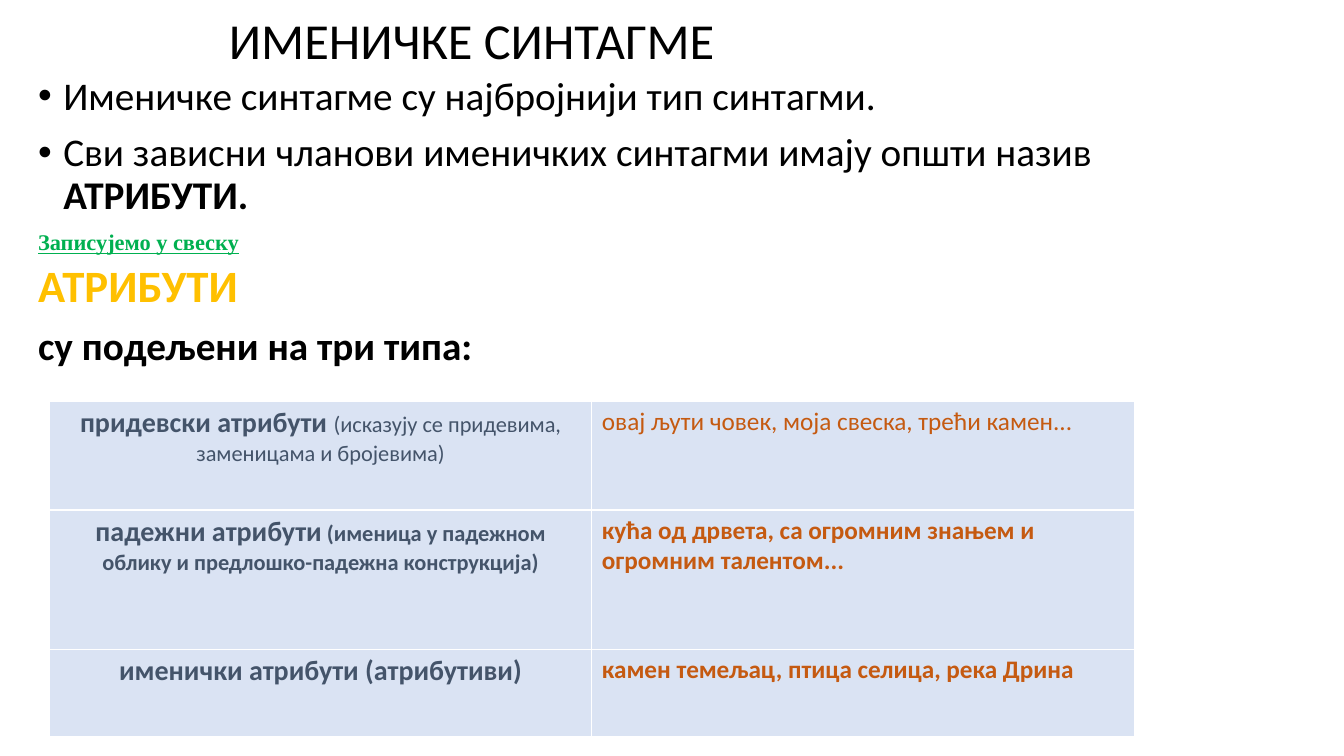
from lxml import etree
from pptx import Presentation
from pptx import util as u
from pptx.dml import color
from pptx.enum import text
from pptx.oxml import ns

BLACK, GREEN, GOLD = "000000", "00B050", "FFC000"
SLATE, RUST, PALE_BLUE, WHITE = "44546A", "C55A11", "DAE3F3", "FFFFFF"

ATTRIBUTE_ROWS = [
    (1.08, "придевски атрибути ", "(исказују се придевима, заменицама и бројевима)",
     "овај љути човек, моја свеска, трећи камен...", False),
    (1.38, "падежни атрибути", " (именица у падежном облику и предлошко-падежна конструкција)",
     "кућа од дрвета, са огромним знањем и огромним талентом...", True),
    (0.87, "именички атрибути (атрибутиви)", "",
     "камен темељац, птица селица, река Дрина", True),
]


def rgb(hex_string):
    return color.RGBColor.from_string(hex_string)


def add_span(para, words, size=28, hue=BLACK, bold=False, underline=False, font="Calibri"):
    span = para.add_run()
    span.text = words
    span.font.name = font
    span.font.size = u.Pt(size)
    span.font.bold = bold
    span.font.underline = underline
    span.font.color.rgb = rgb(hue)


def add_bullet(para):
    properties = para._p.get_or_add_pPr()
    properties.set("marL", str(u.Inches(0.25)))
    properties.set("indent", str(-u.Inches(0.25)))
    font = etree.SubElement(properties, ns.qn("a:buFont"))
    font.set("typeface", "Arial")
    etree.SubElement(properties, ns.qn("a:buChar")).set("char", "•")


def add_box(page, left, top, width, height):
    frame = page.shapes.add_textbox(*map(u.Inches, (left, top, width, height))).text_frame
    frame.word_wrap = True
    return frame


def add_title(page, words):
    title = page.shapes.title
    title.left, title.top = u.Inches(2.17), u.Inches(0.09)
    title.width, title.height = u.Inches(7.58), u.Inches(0.67)
    frame = title.text_frame
    frame.auto_size = text.MSO_AUTO_SIZE.NONE
    frame.vertical_anchor = text.MSO_ANCHOR.MIDDLE
    para = frame.paragraphs[0]
    para.alignment = text.PP_ALIGN.LEFT
    para.line_spacing = 0.9
    add_span(para, words, size=36)


def add_body(page):
    frame = add_box(page, 0.28, 0.71, 10.97, 3.2)
    paras = [frame.paragraphs[0]] + [frame.add_paragraph() for _ in range(3)]
    for para in paras:
        para.line_spacing = 0.9
        para.space_before = u.Pt(10)
    most_common, common_name, notebook, three_types = paras
    add_span(most_common, "Именичке синтагме су најбројнији тип синтагми.")
    add_span(common_name, "Сви зависни чланови именичких синтагми имају општи назив ")
    add_span(common_name, "АТРИБУТИ.", bold=True)
    for para in (most_common, common_name):
        add_bullet(para)
    add_span(notebook, "Записујемо у свеску", size=16, hue=GREEN, bold=True,
             underline=True, font="Times New Roman")
    three_types.space_before = u.Pt(51)  # leaves room for the gold heading
    add_span(three_types, "су подељени на три типа:", bold=True)


def style_cell(cell):
    cell.fill.solid()
    cell.fill.fore_color.rgb = rgb(PALE_BLUE)
    properties = cell._tc.get_or_add_tcPr()
    for position, side in enumerate(("lnL", "lnR", "lnT", "lnB")):
        line = etree.Element(ns.qn("a:" + side), w=str(u.Pt(1)))
        fill = etree.SubElement(line, ns.qn("a:solidFill"))
        etree.SubElement(fill, ns.qn("a:srgbClr")).set("val", WHITE)
        properties.insert(position, line)


def add_attribute_table(page):
    place = map(u.Inches, (0.49, 3.98, 10.76, 3.33))
    table = page.shapes.add_table(len(ATTRIBUTE_ROWS), 2, *place).table
    table.first_row = table.horz_banding = False
    for row, (height, kind, note, example, bold) in zip(table.rows, ATTRIBUTE_ROWS):
        row.height = u.Inches(height)
        for cell in row.cells:
            style_cell(cell)
        kind_para, example_para = (cell.text_frame.paragraphs[0] for cell in row.cells)
        kind_para.alignment = text.PP_ALIGN.CENTER
        add_span(kind_para, kind, size=20, hue=SLATE, bold=True)
        if note:
            add_span(kind_para, note, size=16, hue=SLATE, bold=bold)
        add_span(example_para, example, size=18, hue=RUST, bold=bold)


def main():
    deck = Presentation()
    deck.slide_width, deck.slide_height = u.Inches(13.33), u.Inches(7.5)
    page = deck.slides.add_slide(deck.slide_layouts.get_by_name("Title Only"))
    add_title(page, "ИМЕНИЧКЕ СИНТАГМЕ")
    add_body(page)
    add_attribute_table(page)
    heading = add_box(page, 0.28, 2.51, 4.58, 0.64)
    add_span(heading.paragraphs[0], "АТРИБУТИ", size=32, hue=GOLD, bold=True)
    deck.save("out.pptx")


if __name__ == "__main__":
    main()
